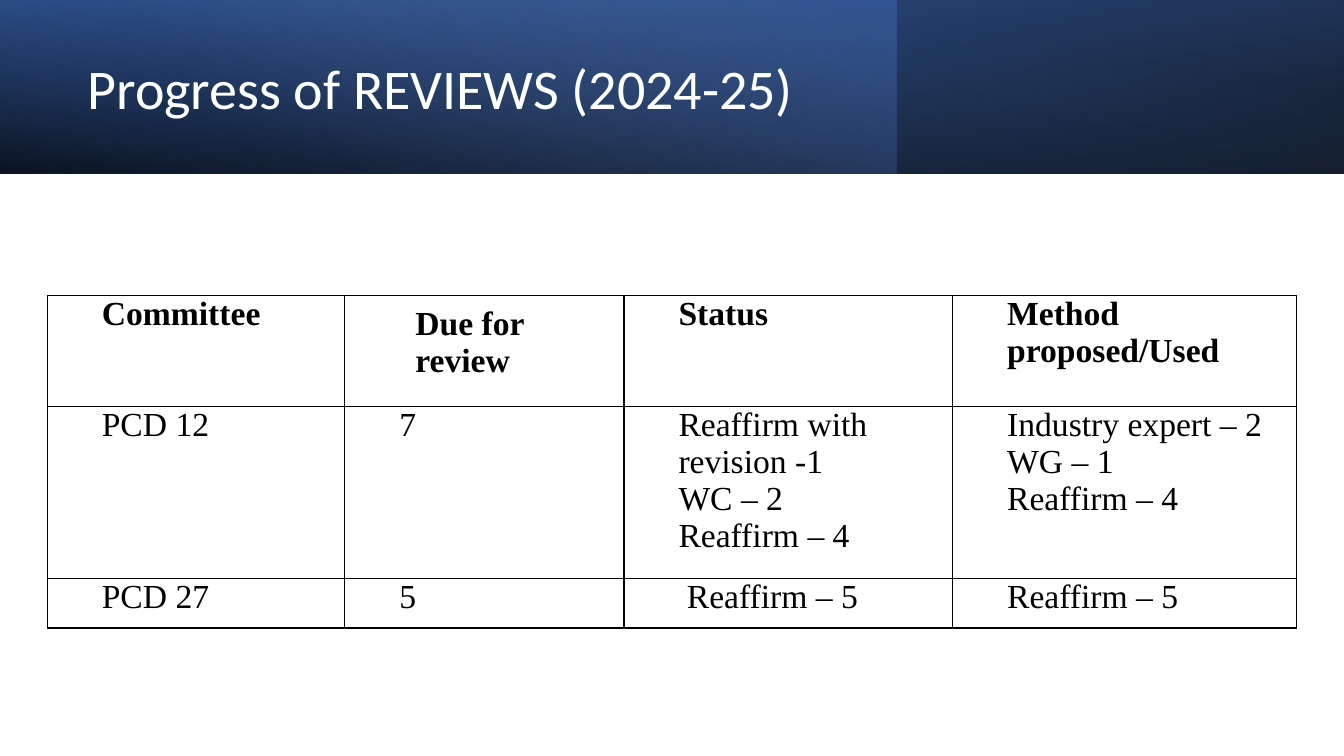
from dataclasses import dataclass

from lxml import etree
from pptx import Presentation
from pptx.dml.color import RGBColor
from pptx.enum.shapes import MSO_SHAPE
from pptx.enum.text import MSO_ANCHOR
from pptx.oxml.ns import qn
from pptx.slide import Slide
from pptx.table import _Cell
from pptx.util import Pt

SCALE = 9144
RECT = MSO_SHAPE.RECTANGLE
TOP = MSO_ANCHOR.TOP
MIDDLE = MSO_ANCHOR.MIDDLE
BLACK = RGBColor(0x00, 0x00, 0x00)
WHITE = RGBColor(0xFF, 0xFF, 0xFF)
NAVY = RGBColor(0x2F, 0x55, 0x97)
BLUE = RGBColor(0x44, 0x72, 0xC4)
PALE = RGBColor(0x8F, 0xAA, 0xDC)


@dataclass(frozen=True)
class Stop:
    place: int
    color: RGBColor
    alpha: int = 100


@dataclass(frozen=True)
class Band:
    width: int
    angle: int
    stops: tuple[Stop, ...]
    turn: int = 0
    flip: bool = False


BAND_HEIGHT = 172
BANDS = (
    Band(1333, 100, (Stop(0, BLACK, 96), Stop(100, NAVY)), 180, True),
    Band(889, 140, (Stop(0, BLUE, 41), Stop(74, PALE, 0))),
    Band(1333, 260, (Stop(0, BLACK, 63), Stop(78, BLUE, 15)), flip=True),
)
COLUMNS = (295, 277, 326, 341)
HEIGHTS = (110, 171, 49)
ROWS = (
    ("Committee", "Due for review", "Status", "Method proposed/Used"),
    (
        "PCD 12",
        "7",
        "Reaffirm with revision -1\nWC – 2\nReaffirm – 4",
        "Industry expert – 2\nWG – 1\nReaffirm – 4",
    ),
    ("PCD 27", "5", " Reaffirm – 5", "Reaffirm – 5"),
)
INSETS = (4, 0)
WIDE_INSETS = (20, 10)


def px(count: int) -> int:
    return count * SCALE


def add_color(parent: etree._Element, color: RGBColor, alpha: int = 100) -> None:
    node = etree.SubElement(parent, qn("a:srgbClr"), val=str(color))
    if alpha < 100:
        etree.SubElement(node, qn("a:alpha"), val=str(alpha * 1000))


def add_band(slide: Slide, band: Band) -> None:
    shape = slide.shapes.add_shape(RECT, 0, 0, px(band.width), px(BAND_HEIGHT))
    shape.shadow.inherit = False
    shape.line.fill.background()
    shape.rotation = band.turn
    props = shape._element.spPr
    if band.flip:
        props.find(qn("a:xfrm")).set("flipH", "1")
    shape.fill.gradient()
    grad = props.find(qn("a:gradFill"))
    grad.clear()
    grad.set("rotWithShape", "1")
    stops = etree.SubElement(grad, qn("a:gsLst"))
    for stop in band.stops:
        node = etree.SubElement(stops, qn("a:gs"), pos=str(stop.place * 1000))
        add_color(node, stop.color, stop.alpha)
    etree.SubElement(grad, qn("a:lin"), ang=str(band.angle * 60000), scaled="0")


def add_title(slide: Slide, text: str) -> None:
    box = slide.shapes.add_textbox(px(77), px(27), px(772), px(127))
    frame = box.text_frame
    frame.word_wrap = True
    frame.vertical_anchor = MIDDLE
    para = frame.paragraphs[0]
    para.line_spacing = 0.9
    run = para.add_run()
    run.text = text
    run.font.name = "Calibri"
    run.font.size = Pt(40)
    run.font.color.rgb = WHITE


def set_borders(cell: _Cell) -> None:
    props = cell._tc.get_or_add_tcPr()
    for index, side in enumerate(("lnL", "lnR", "lnT", "lnB")):
        line = etree.Element(qn(f"a:{side}"), w=str(Pt(1)))
        add_color(etree.SubElement(line, qn("a:solidFill")), BLACK)
        props.insert(index, line)


def fill_cell(cell: _Cell, text: str, bold: bool, insets: tuple[int, int]) -> None:
    cell.fill.background()
    cell.vertical_anchor = TOP
    cell.margin_left = cell.margin_right = px(insets[0])
    cell.margin_top = cell.margin_bottom = px(insets[1])
    set_borders(cell)
    frame = cell.text_frame
    for index, line in enumerate(text.split("\n")):
        para = frame.add_paragraph() if index else frame.paragraphs[0]
        props = para._p.get_or_add_pPr()
        props.set("marL", str(px(50)))
        props.set("indent", "0")
        run = para.add_run()
        run.text = line
        run.font.name = "Times New Roman"
        run.font.size = Pt(24)
        run.font.bold = bold
        run.font.color.rgb = BLACK


def add_grid(slide: Slide) -> None:
    frame = slide.shapes.add_table(
        len(ROWS), len(COLUMNS), px(47), px(293), px(sum(COLUMNS)), px(sum(HEIGHTS))
    )
    table = frame.table
    table.first_row = False
    table.horz_banding = False
    for column, width in zip(table.columns, COLUMNS):
        column.width = px(width)
    for row, height in zip(table.rows, HEIGHTS):
        row.height = px(height)
    for r, texts in enumerate(ROWS):
        for c, text in enumerate(texts):
            insets = WIDE_INSETS if (r, c) == (0, 1) else INSETS
            fill_cell(table.cell(r, c), text, r == 0, insets)


def main() -> None:
    deck = Presentation()
    deck.slide_width = px(1333)
    deck.slide_height = px(750)
    slide = deck.slides.add_slide(deck.slide_layouts[6])
    for band in BANDS:
        add_band(slide, band)
    add_title(slide, "Progress of REVIEWS (2024-25)")
    add_grid(slide)
    deck.save("out.pptx")


if __name__ == "__main__":
    main()
